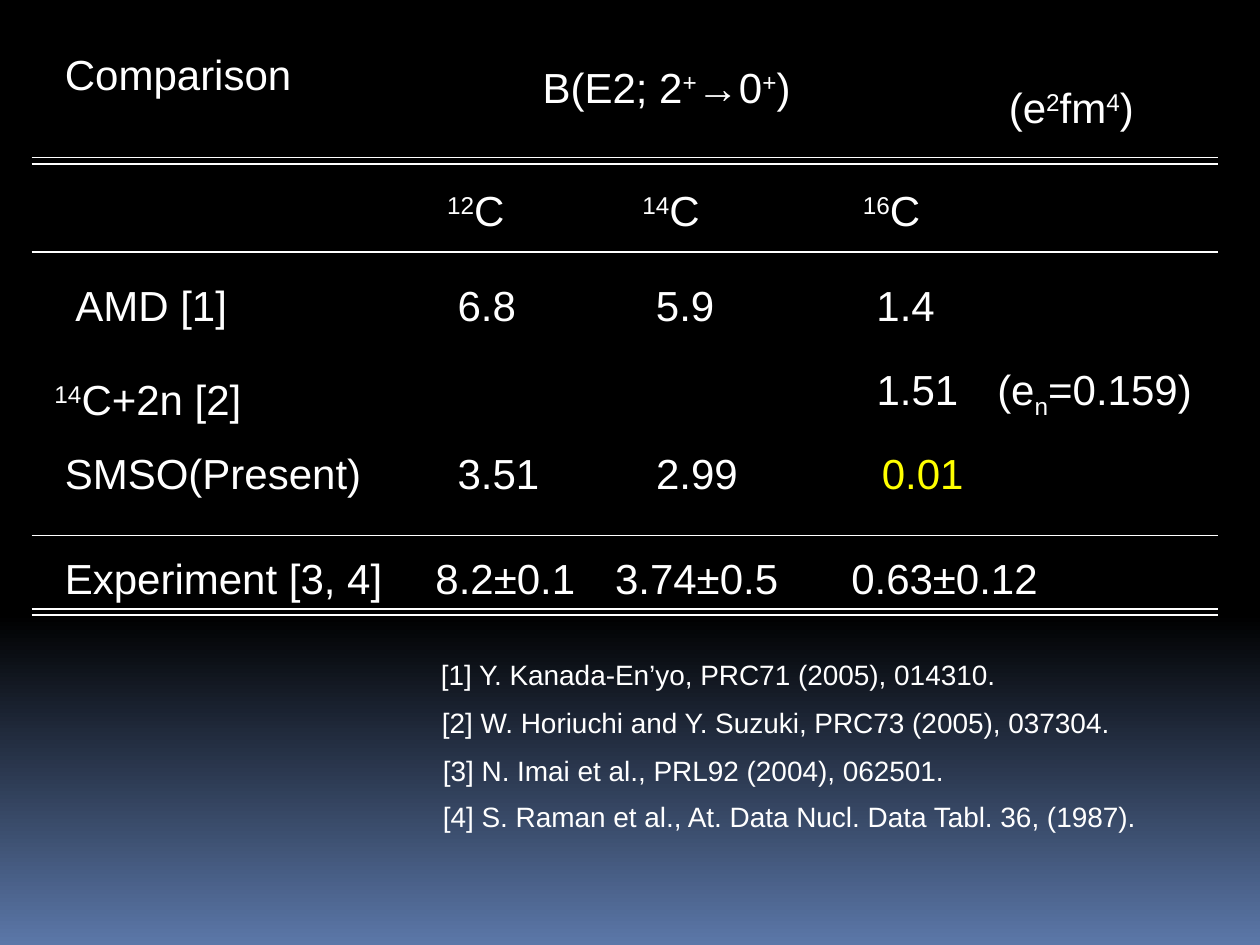
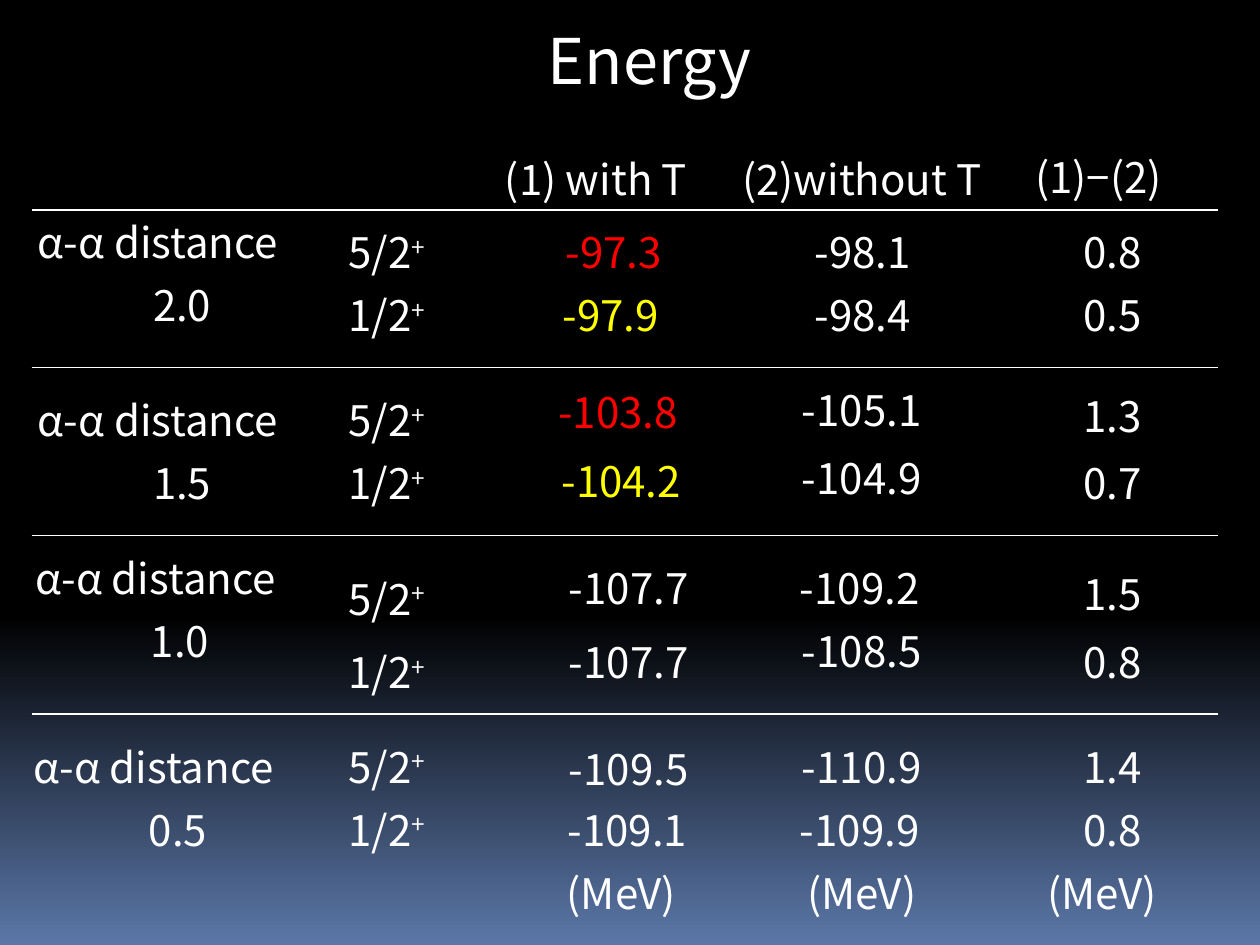
from copy import deepcopy

from lxml.etree import SubElement
from pptx import Presentation
from pptx.dml.color import RGBColor
from pptx.enum.shapes import MSO_CONNECTOR
from pptx.enum.text import MSO_AUTO_SIZE
from pptx.oxml.ns import qn
from pptx.util import Inches, Pt

GRID = 12  # columns and rows per inch: 120 columns by 90 rows
WHITE, YELLOW, RED = "FFFFFF", "FFFF00", "FF0000"
BACKDROP = [(0, "000000"), (0.65, "000000"), (1, "5B77A8")]
RULE_LEFT, RULE_RIGHT = 3, 116
LINE_HEIGHT = 6
BASELINES = {"^": "30000", "~": "-25000"}  # ^raised^ and ~lowered~ text


def rgb(code):
    return RGBColor.from_string(code)


def grid(cells):
    return Inches(cells / GRID)


class Deck:
    """Keeps the style and the current slide; lengths are grid cells."""

    def __init__(self):
        self.prs = Presentation()
        self.prs.slide_width, self.prs.slide_height = Inches(10), Inches(7.5)
        self.paint_backdrop()

    def paint_backdrop(self):
        fill = self.prs.slide_master.background.fill
        fill.gradient()
        fill.gradient_angle = 270
        first = fill.gradient_stops[0]._gs
        first.addnext(deepcopy(first))
        for stop, (position, colour) in zip(fill.gradient_stops, BACKDROP):
            stop.position = position
            stop.color.rgb = rgb(colour)

    def start_slide(self, font, rule_weight, number_widths):
        """Open a slide; number_widths maps a number's length to its width."""
        self.slide = self.prs.slides.add_slide(self.prs.slide_layouts[6])
        self.font = font
        self.rule_weight = rule_weight
        self.number_widths = number_widths

    def text(self, left, row, width, words, size=24, colour=WHITE, height=LINE_HEIGHT):
        box = self.slide.shapes.add_textbox(grid(left), grid(row), grid(width), grid(height))
        frame = box.text_frame
        frame.word_wrap = False
        frame.auto_size = MSO_AUTO_SIZE.SHAPE_TO_FIT_TEXT
        paragraph = frame.paragraphs[0]
        paragraph.font.name = self.font
        paragraph.font.size = Pt(size)
        paragraph.font.color.rgb = rgb(colour)
        mark = "~" if "~" in words else "^"
        for index, part in enumerate(words.split(mark)):
            if part:
                run = paragraph.add_run()
                run.text = part
                if index % 2:
                    run._r.get_or_add_rPr().set("baseline", BASELINES[mark])

    def number(self, left, row, value, colour=WHITE):
        self.text(left, row, self.number_widths[len(value)], value, colour=colour)

    def rules(self, *rows):
        """Draw full-width horizontal lines."""
        for row in rows:
            line = self.slide.shapes.add_connector(
                MSO_CONNECTOR.STRAIGHT, grid(RULE_LEFT), grid(row), grid(RULE_RIGHT), grid(row))
            line.line.color.rgb = rgb(WHITE)
            line.line.width = Pt(self.rule_weight)
            SubElement(line._element.spPr, qn("a:effectLst"))


def build_comparison(deck):
    deck.start_slide("Arial", 1, {3: 8.2, 4: 10.4, 7: 15.9, 8: 18.2, 9: 20.4})
    deck.rules(15, 15.6, 24, 51, 58, 58.6)

    deck.text(5, 4, 24.2, "Comparison")
    deck.text(50.5, 5.3, 26.6, "B(E2; 2^+^→0^+^)")
    deck.text(94.9, 7.2, 15, "(e^2^fm^4^)")
    for left, isotope in [(41.4, "^12^C"), (60, "^14^C"), (81, "^16^C")]:
        deck.text(left, 17, 8.5, isotope)

    models = [(6, 26, 17.2, "AMD [1]"), (4, 35, 20.8, "^14^C+2n [2]"),
              (5, 42, 30.8, "SMSO(Present)"), (5, 52, 32.8, "Experiment [3, 4]")]
    for model in models:
        deck.text(*model)

    strengths = {
        26: [(42.4, "6.8"), (61.3, "5.9"), (82.3, "1.4")],
        34: [(82.3, "1.51")],
        42: [(42.4, "3.51"), (61.3, "2.99"), (82.8, "0.01", YELLOW)],
        52: [(40.3, "8.2±0.1"), (57.4, "3.74±0.5"), (79.9, "0.63±0.12")],
    }
    for row, values in strengths.items():
        for left, *value in values:
            deck.number(left, row, *value)
    deck.text(93.8, 34, 21.3, "(e~n~=0.159)")

    references = [
        (40.8, 62, 56, "[1] Y. Kanada-En’yo, PRC71 (2005), 014310."),
        (40.9, 66.6, 66.9, "[2] W. Horiuchi and Y. Suzuki, PRC73 (2005), 037304."),
        (41, 71.2, 50.5, "[3] N. Imai et al., PRL92 (2004), 062501."),
        (41, 75.6, 70, "[4] S. Raman et al., At. Data Nucl. Data Tabl. 36, (1987)."),
    ]
    for reference in references:
        deck.text(*reference, size=16, height=4.4)


def build_energy(deck):
    deck.start_slide("Noto Sans CJK JP", 0.75, {3: 8.9, 5: 13.1, 6: 15.6})
    deck.rules(20, 35, 51, 68)

    deck.text(51, 1.5, 23, "Energy", size=36, height=8.5)
    deck.text(46.9, 14, 22.2, "(1) with T")
    deck.text(69.5, 14, 27.2, "(2)without T")
    deck.text(97.4, 13.8, 16.3, "(1)−(2)")

    distances = [(2.4, 20, "2.0"), (2.4, 37, "1.5"), (2.2, 52, "1.0"), (2, 70, "0.5")]
    for left, row, distance in distances:
        deck.text(left, row, 26.5, "α-α distance")
        deck.number(left + 11, row + LINE_HEIGHT, distance)

    for upper, lower in [(21, 27), (37, 43), (54, 61), (70, 76)]:
        deck.text(32, upper, 11.4, "5/2^+^")
        deck.text(32, lower, 11.4, "1/2^+^")

    with_t = [
        (52.7, 21, "-97.3", RED), (52.4, 27, "-97.9", YELLOW),
        (52, 36.2, "-103.8", RED), (52.3, 42.8, "-104.2", YELLOW),
        (53, 53, "-107.7"), (53, 60, "-107.7"),
        (53, 70.2, "-109.5"), (52.9, 76, "-109.1"),
    ]
    without_t = [
        (76.4, 21, "-98.1"), (76.4, 27, "-98.4"),
        (75.2, 36, "-105.1"), (75.2, 42.5, "-104.9"),
        (75, 53, "-109.2"), (75.2, 59, "-108.5"),
        (75.2, 70, "-110.9"), (75, 76, "-109.9"),
    ]
    for energy in with_t + without_t:
        deck.number(*energy)

    differences = {21: "0.8", 27: "0.5", 36.6: "1.3", 43: "0.7",
                   53.6: "1.5", 60: "0.8", 70: "1.4", 76: "0.8"}
    for row, difference in differences.items():
        deck.number(102, row, difference)

    for column in range(3):
        deck.text(52.8 + 22.9 * column, 82, 14.4, "(MeV)")


def main():
    deck = Deck()
    build_comparison(deck)
    build_energy(deck)
    deck.prs.save("out.pptx")


if __name__ == "__main__":
    main()
